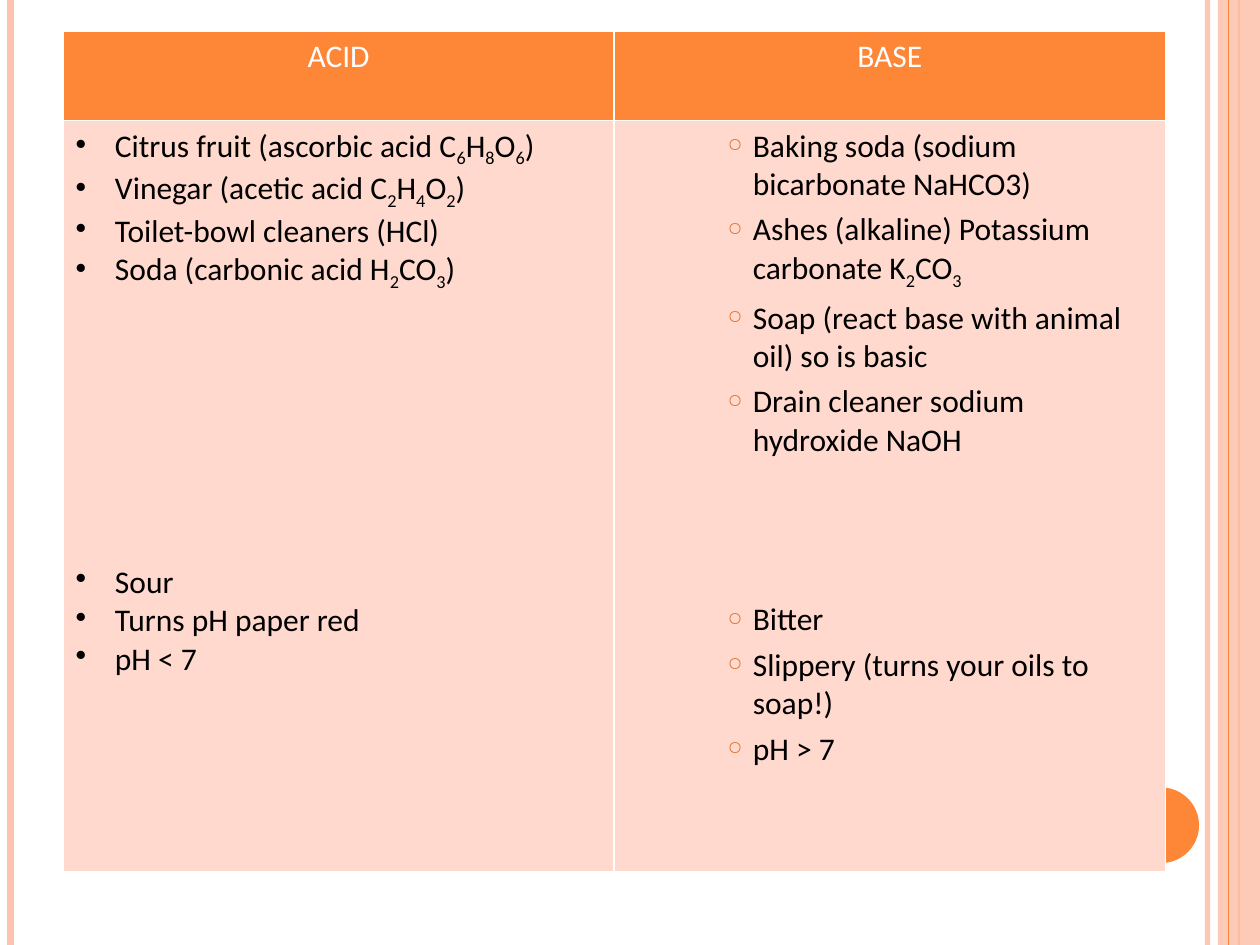
from typing import NamedTuple

import lxml.etree
import pptx
import pptx.dml.color
import pptx.enum.shapes
import pptx.enum.text
import pptx.oxml.ns
import pptx.util

Pt = pptx.util.Pt
qn = pptx.oxml.ns.qn
HUES = {
    "white": "FFFFFF",
    "black": "000000",
    "peach": "FEC3AE",
    "orange": "FE8637",
    "pale": "FFD9CE",
    "rust": "E07631",
}
FONT, SIZE = "Calibri", 18
WIDE, HIGH = 720, 540


class Rule(NamedTuple):
    left: float
    width: float
    hue: str
    alpha: int = 100


class Form(NamedTuple):
    kind: int
    box: tuple
    hue: str
    alpha: int = 100


class List(NamedTuple):
    mark: str
    level: int
    left: float
    hang: float
    space: float  # before each item
    gap: float  # before the second group
    groups: tuple
    hue: str = ""
    scale: int = 100


# An underscore lowers the character after it
ACID = List("•", 0, 22.5, 22.5, 0, 154, (
    ("Citrus fruit (ascorbic acid C_6H_8O_6)",
     "Vinegar (acetic acid C_2H_4O_2)",
     "Toilet-bowl cleaners (HCl)",
     "Soda (carbonic acid H_2CO_3)"),
    ("Sour", "Turns pH paper red", "pH < 7")))
BASE = List("○", 2, 72, 14.4, 4, 80.5, (
    ("Baking soda (sodium bicarbonate NaHCO3)",
     "Ashes (alkaline) Potassium carbonate K_2CO_3",
     "Soap (react base with animal oil) so is basic",
     "Drain cleaner sodium hydroxide NaOH"),
    ("Bitter", "Slippery (turns your oils to soap!)", "pH > 7")),
    "rust", 60)

KINDS = pptx.enum.shapes.MSO_SHAPE
PARTS = (
    Rule(690, 3, "peach", 93),
    Rule(6, 4.5, "peach"),
    Rule(708, 1.5, "orange"),
    Form(KINDS.RECTANGLE, (696, 0, 24, HIGH), "peach", 87),
    Rule(702, 0.75, "orange"),
    Form(KINDS.OVAL, (642, 450, 43.2, 43.2), "orange"),
)


def tint(hue: str):
    return pptx.dml.color.RGBColor.from_string(HUES[hue])


def add(node, tag: str, **attrs):
    return lxml.etree.SubElement(node, qn(tag), attrs)


def fade(shape, alpha: int) -> None:
    if alpha < 100:
        color = next(shape._element.spPr.iter(qn("a:srgbClr")))
        add(color, "a:alpha", val=str(alpha * 1000))


def draw_rule(slide, rule: Rule) -> None:
    line = slide.shapes.add_connector(
        pptx.enum.shapes.MSO_CONNECTOR.STRAIGHT,
        Pt(rule.left), 0, Pt(rule.left), Pt(HIGH))
    line.line.color.rgb = tint(rule.hue)
    line.line.width = Pt(rule.width)
    fade(line, rule.alpha)
    add(line._element.spPr, "a:effectLst")


def draw_form(slide, form: Form) -> None:
    shape = slide.shapes.add_shape(form.kind, *map(Pt, form.box))
    shape.shadow.inherit = False
    shape.fill.solid()
    shape.fill.fore_color.rgb = tint(form.hue)
    shape.line.fill.background()
    fade(shape, form.alpha)


def add_run(para, text: str, hue: str, low: bool = False) -> None:
    if not text:
        return
    run = para.add_run()
    run.text = text
    run.font.name = FONT
    run.font.size = Pt(SIZE)
    run.font.bold = False
    run.font.color.rgb = tint(hue)
    if low:
        run._r.get_or_add_rPr().set("baseline", "-25000")


def paint(cell, hue: str) -> None:
    cell.fill.solid()
    cell.fill.fore_color.rgb = tint(hue)
    props = cell._tc.get_or_add_tcPr()
    for spot, side in enumerate("LRTB"):
        edge = add(props, f"a:ln{side}", w=str(Pt(1)))
        add(add(edge, "a:solidFill"), "a:srgbClr", val=HUES["white"])
        props.insert(spot, edge)


def add_item(para, text: str, style: List, space: float) -> None:
    para.level = style.level
    para.space_before = Pt(space)
    props = para._p.get_or_add_pPr()
    props.set("marL", str(Pt(style.left)))
    props.set("indent", str(-Pt(style.hang)))
    if style.hue:
        add(add(props, "a:buClr"), "a:srgbClr", val=HUES[style.hue])
    add(props, "a:buSzPct", val=str(style.scale * 1000))
    add(props, "a:buChar", char=style.mark)
    first, *rest = text.split("_")
    add_run(para, first, "black")
    for part in rest:
        add_run(para, part[0], "black", low=True)
        add_run(para, part[1:], "black")


def fill_list(cell, style: List) -> None:
    frame = cell.text_frame
    para = frame.paragraphs[0]
    for part, group in enumerate(style.groups):
        for spot, text in enumerate(group):
            if part or spot:
                para = frame.add_paragraph()
            space = style.gap if part and not spot else style.space
            add_item(para, text, style, space)


def draw_table(slide) -> None:
    table = slide.shapes.add_table(
        2, 2, Pt(36), Pt(18), Pt(630), Pt(480)).table
    for row, height in zip(table.rows, (51, 429)):
        row.height = Pt(height)
    for col, (head, style) in enumerate((("ACID", ACID), ("BASE", BASE))):
        table.columns[col].width = Pt(315)
        top, body = table.cell(0, col), table.cell(1, col)
        paint(top, "orange")
        paint(body, "pale")
        para = top.text_frame.paragraphs[0]
        para.alignment = pptx.enum.text.PP_ALIGN.CENTER
        add_run(para, head, "white")
        fill_list(body, style)


def main() -> None:
    deck = pptx.Presentation()
    deck.slide_width, deck.slide_height = Pt(WIDE), Pt(HIGH)
    slide = deck.slides.add_slide(deck.slide_layouts[6])
    # Side stripes and disc
    for part in PARTS:
        draw = draw_rule if isinstance(part, Rule) else draw_form
        draw(slide, part)
    # Comparison table
    draw_table(slide)
    deck.save("out.pptx")


if __name__ == "__main__":
    main()
